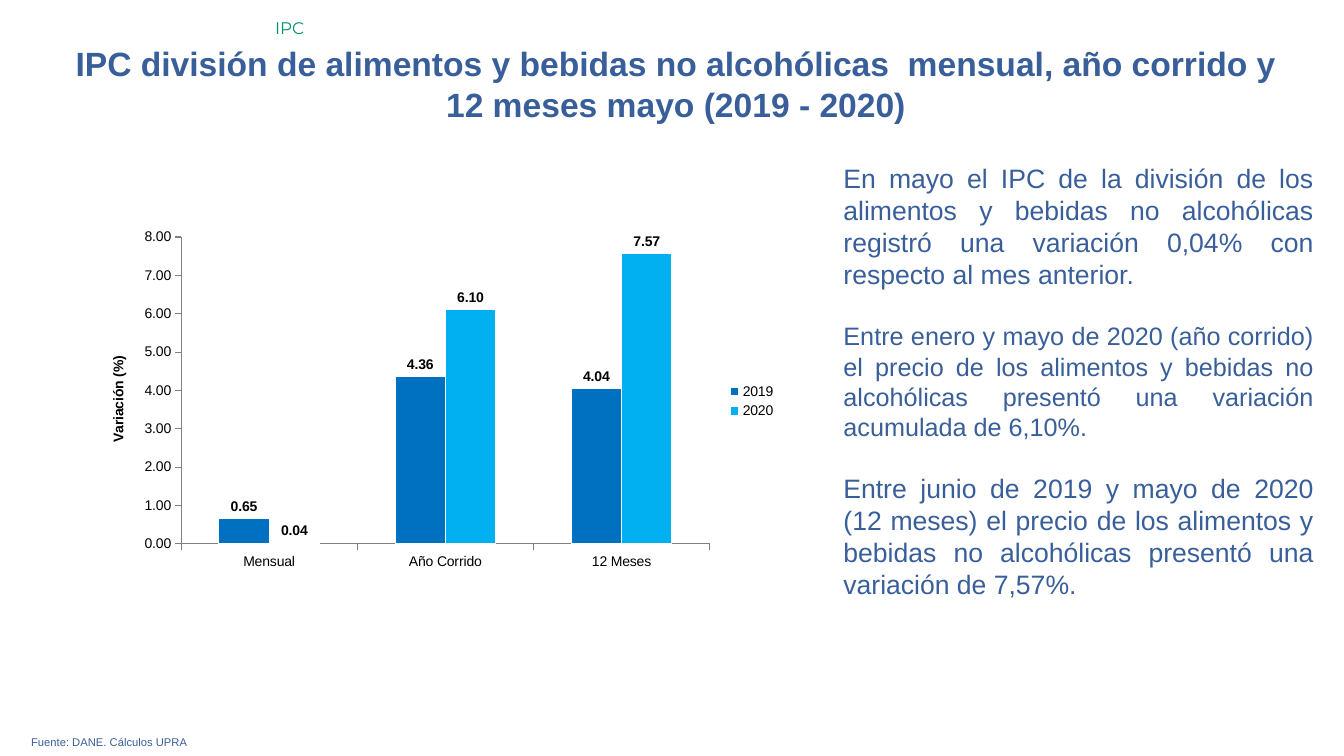
from lxml import etree
from pptx import Presentation
from pptx.chart.data import CategoryChartData
from pptx.dml.color import RGBColor
from pptx.enum.chart import (XL_CHART_TYPE, XL_LABEL_POSITION,
                             XL_LEGEND_POSITION, XL_TICK_LABEL_POSITION,
                             XL_TICK_MARK)
from pptx.enum.text import PP_ALIGN
from pptx.oxml import parse_xml
from pptx.oxml.ns import nsdecls, qn
from pptx.util import Pt

COLUMN = XL_CHART_TYPE.COLUMN_CLUSTERED
OUTER = XL_LABEL_POSITION.OUTSIDE_END
RIGHT = XL_LEGEND_POSITION.RIGHT
LOW = XL_TICK_LABEL_POSITION.LOW
TICK_OUT, TICK_NONE = XL_TICK_MARK.OUTSIDE, XL_TICK_MARK.NONE
LEFT, CENTER, JUSTIFY = PP_ALIGN.LEFT, PP_ALIGN.CENTER, PP_ALIGN.JUSTIFY

COLORS = {"text": "395F9B", "topic": "009267", "2019": "0070C0",
          "2020": "00B0F0", "axis": "808080", "white": "FFFFFF",
          "black": "000000"}
FORMAT = "#,##0.00"
CATS = ["Mensual", "Año Corrido", "12 Meses"]
RATES = {"2019": [0.65, 4.36, 4.04], "2020": [0.04, 6.1, 7.57]}
PLOT = {"x": 0.13, "y": 0.04, "w": 0.76, "h": 0.86}

TITLE = ("IPC división de alimentos y bebidas no alcohólicas  mensual, "
         "año corrido y 12 meses mayo (2019 - 2020)")
NOTES = [
    ("En mayo el IPC de la división de los alimentos y bebidas no "
     "alcohólicas registró una variación 0,04% con respecto al mes "
     "anterior.", 19),
    ("Entre enero y mayo de 2020 (año corrido) el precio de los alimentos "
     "y bebidas no alcohólicas presentó una variación acumulada de 6,10%.",
     18),
    ("Entre junio de 2019 y mayo de 2020 (12 meses) el precio de los "
     "alimentos y bebidas no alcohólicas presentó una variación de 7,57%.",
     19),
]


def rgb(name):
    return RGBColor.from_string(COLORS[name])


def add_text(slide, box, lines, align, color="text", face="Arial",
             bold=False, gap=0):
    """Place (text, size) paragraphs in a box, set apart by gap points."""
    frame = slide.shapes.add_textbox(*map(Pt, box)).text_frame
    frame.word_wrap = True
    for i, (text, size) in enumerate(lines):
        para = frame.add_paragraph() if i else frame.paragraphs[0]
        para.text = text
        para.alignment = align
        if i and gap:
            para.space_before = Pt(gap)
        font = para.runs[0].font
        font.name, font.size, font.bold = face, Pt(size), bold
        font.color.rgb = rgb(color)


def set_plot(chart):
    """Fix the inner plot area as fractions of the chart."""
    area = chart._chartSpace.find(".//" + qn("c:plotArea"))
    for old in area.findall(qn("c:layout")):
        area.remove(old)
    layout = parse_xml(f"<c:layout {nsdecls('c')}/>")
    manual = etree.SubElement(layout, qn("c:manualLayout"))
    rules = {"layoutTarget": "inner", "xMode": "edge", "yMode": "edge", **PLOT}
    for tag, value in rules.items():
        etree.SubElement(manual, qn("c:" + tag)).set("val", str(value))
    area.insert(0, layout)


def style_axis(axis):
    axis.has_major_gridlines = False
    axis.major_tick_mark, axis.minor_tick_mark = TICK_OUT, TICK_NONE
    axis.format.line.color.rgb = rgb("axis")
    axis.format.line.width = Pt(0.75)


def style_series(series):
    series.format.fill.solid()
    series.format.fill.fore_color.rgb = rgb(series.name)
    series.format.line.color.rgb = rgb("white")
    labels = series.data_labels
    labels.show_value = True
    labels.position = OUTER
    labels.number_format, labels.number_format_is_linked = FORMAT, False
    style_font(labels.font, True)


def style_font(font, bold=False):
    font.name, font.size, font.bold = "Arial", Pt(10), bold
    font.color.rgb = rgb("black")


def add_rates(slide, box):
    data = CategoryChartData(number_format=FORMAT)
    data.categories = CATS
    for year, values in RATES.items():
        data.add_series(year, values)
    chart = slide.shapes.add_chart(COLUMN, *map(Pt, box), data).chart
    style_font(chart.font)
    chart.has_title = False
    chart.has_legend = True
    chart.legend.position = RIGHT
    chart.legend.include_in_layout = False
    plot = chart.plots[0]
    plot.gap_width, plot.overlap = 150, 0
    plot.vary_by_categories = False
    for series in plot.series:
        style_series(series)
    cats, vals = chart.category_axis, chart.value_axis
    style_axis(cats)
    style_axis(vals)
    cats.tick_label_position = LOW
    vals.minimum_scale, vals.maximum_scale, vals.major_unit = 0, 8, 1
    vals.tick_labels.number_format = FORMAT
    vals.tick_labels.number_format_is_linked = False
    frame = vals.axis_title.text_frame
    frame.text = "Variación (%)"
    style_font(frame.paragraphs[0].runs[0].font, True)
    set_plot(chart)


def main():
    deck = Presentation()
    deck.slide_width, deck.slide_height = Pt(960), Pt(540)
    slide = deck.slides.add_slide(deck.slide_layouts[6])
    add_text(slide, (32.4, 27.4, 900.7, 65.5), [(TITLE, 24)], CENTER,
             bold=True)
    add_text(slide, (15.1, 522, 929.5, 17.3),
             [("Fuente: DANE. Cálculos UPRA", 8)], JUSTIFY)
    add_text(slide, (595.4, 112.3, 350, 347.8), NOTES, JUSTIFY, gap=22)
    add_text(slide, (189.4, 9.4, 770, 21.6), [("IPC", 12)], LEFT,
             color="topic", face="Montserrat")
    add_rates(slide, (64.8, 159.1, 496.8, 254.9))
    deck.save("out.pptx")


if __name__ == "__main__":
    main()
